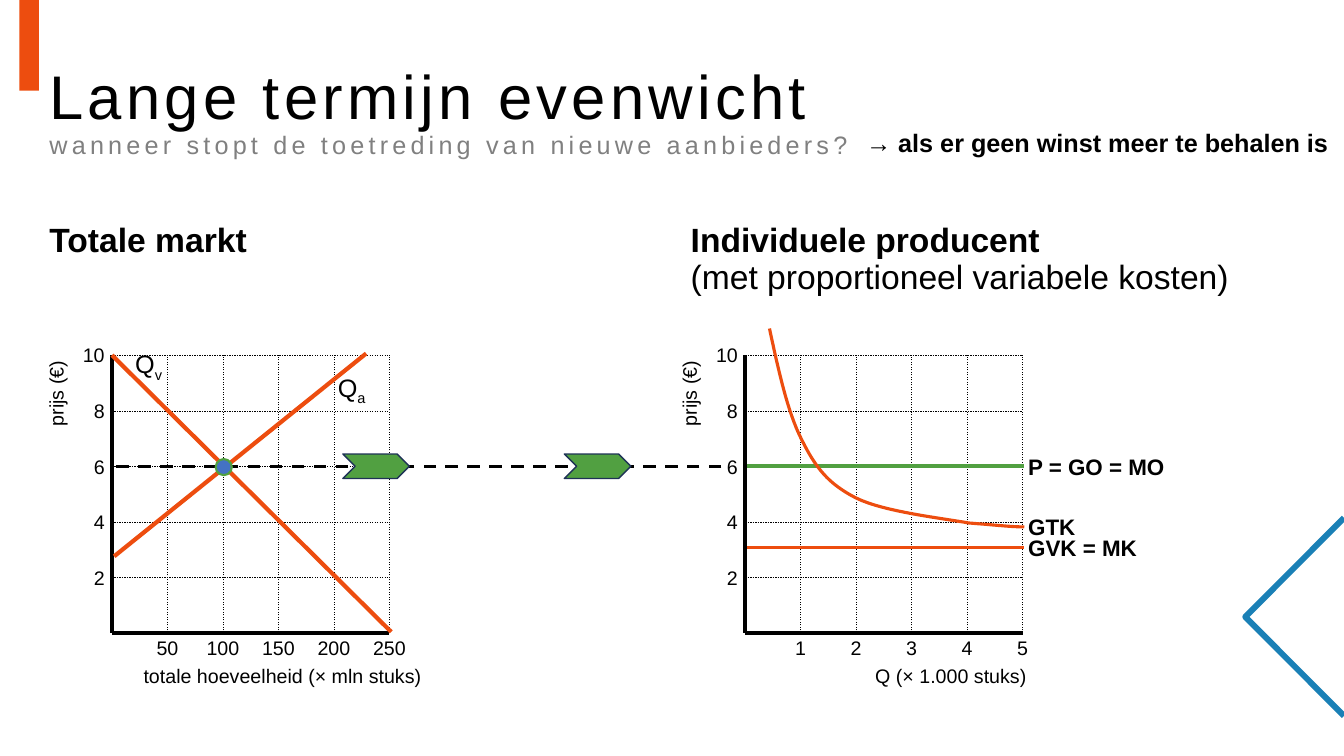
"""Build the slide on long-term market equilibrium with two price diagrams."""
import dataclasses

import lxml.etree
import pptx
import pptx.dml.color
import pptx.enum.dml
import pptx.enum.shapes
import pptx.enum.text
import pptx.oxml.ns
import pptx.util

ALIGN = pptx.enum.text.PP_ALIGN
ANCHOR = pptx.enum.text.MSO_ANCHOR
SHAPE = pptx.enum.shapes.MSO_SHAPE
WIDTH = pptx.util.Inches(13.33)
HEIGHT = pptx.util.Inches(7.5)


@dataclasses.dataclass(frozen=True)
class Theme:
    font: str = "Arial"
    black: str = "000000"
    grey: str = "808080"
    orange: str = "ED4D0F"
    green: str = "51A041"
    blue: str = "1A80B6"
    navy: str = "1E3256"
    dot: str = "4472C4"
    title: int = 44
    heading: int = 24
    text: int = 18
    curve_label: int = 16
    axis_label: int = 14


THEME = Theme()


def across(percent):
    return round(WIDTH * percent / 100)


def down(percent):
    return round(HEIGHT * percent / 100)


CELL_WIDTH = across(4.13)
CELL_HEIGHT = down(7.35)


@dataclasses.dataclass(frozen=True)
class Plot:
    left: int
    bottom: int
    cells: int = 5

    def at(self, column, row):
        return (round(self.left + column * CELL_WIDTH),
                round(self.bottom - row * CELL_HEIGHT))


def color(value):
    return pptx.dml.color.RGBColor.from_string(value)


def style_font(font, size, value=THEME.black, bold=False):
    font.name = THEME.font
    font.size = pptx.util.Pt(size)
    font.color.rgb = color(value)
    font.bold = bold


def style_line(line, value, width):
    line.color.rgb = color(value)
    line.width = pptx.util.Pt(width)


def add_line(slide, start, end, value, width, dashed=False):
    connector = slide.shapes.add_connector(
        pptx.enum.shapes.MSO_CONNECTOR.STRAIGHT, *start, *end)
    style_line(connector.line, value, width)
    if dashed:
        connector.line.dash_style = pptx.enum.dml.MSO_LINE.DASH
    lxml.etree.SubElement(connector._element.spPr, pptx.oxml.ns.qn("a:effectLst"))


def add_shape(slide, kind, left, top, width, height, fill, outline=None, weight=1):
    shape = slide.shapes.add_shape(kind, left, top, width, height)
    shape.shadow.inherit = False
    shape.fill.solid()
    shape.fill.fore_color.rgb = color(fill)
    if outline:
        style_line(shape.line, outline, weight)
    else:
        shape.line.fill.background()


def add_path(slide, points, value, width):
    builder = slide.shapes.build_freeform(*points[0])
    builder.add_line_segments(points[1:], close=False)
    shape = builder.convert_to_shape()
    shape.shadow.inherit = False
    shape.fill.background()
    style_line(shape.line, value, width)


def add_label(slide, text, position, size, align=ALIGN.LEFT, bold=False,
              width=CELL_WIDTH, rotation=0, subscript=""):
    x, y = position
    shift = {ALIGN.LEFT: 0, ALIGN.CENTER: width // 2, ALIGN.RIGHT: width}[align]
    height = down(4.5)
    box = slide.shapes.add_textbox(x - shift, y - height // 2, width, height)
    box.rotation = rotation
    frame = box.text_frame
    frame.word_wrap = True
    frame.vertical_anchor = ANCHOR.MIDDLE
    frame.margin_left = frame.margin_right = frame.margin_top = frame.margin_bottom = 0
    paragraph = frame.paragraphs[0]
    paragraph.alignment = align
    style_font(paragraph.font, size, bold=bold)
    paragraph.add_run().text = text
    if subscript:
        run = paragraph.add_run()
        run.text = subscript
        run._r.get_or_add_rPr().set("baseline", "-25000")


def fill_placeholder(placeholder, box, lines, spacing=0):
    placeholder.left, placeholder.top, placeholder.width, placeholder.height = box
    frame = placeholder.text_frame
    frame.word_wrap = True
    frame.auto_size = pptx.enum.text.MSO_AUTO_SIZE.NONE
    paragraph = frame.paragraphs[0]
    paragraph.alignment = ALIGN.LEFT
    paragraph.line_spacing = 0.9
    for index, (text, size, value, bold) in enumerate(lines):
        if index:
            paragraph.add_line_break()
        run = paragraph.add_run()
        run.text = text
        style_font(run.font, size, value, bold)
        if spacing:
            run._r.get_or_add_rPr().set("spc", str(spacing))
    return paragraph


def fill_heading(placeholder, box, lines):
    paragraph = fill_placeholder(placeholder, box, lines)
    paragraph.space_before = pptx.util.Pt(10)
    properties = paragraph._p.get_or_add_pPr()
    properties.set("marL", "0")
    properties.set("indent", "0")
    lxml.etree.SubElement(properties, pptx.oxml.ns.qn("a:buNone"))


def add_plot(slide, plot, quantity_step, quantity_title, title_column):
    end = plot.cells
    size = THEME.axis_label
    for step in range(1, end + 1):
        add_line(slide, plot.at(0, step), plot.at(end, step), THEME.black, 0.25, True)
        add_line(slide, plot.at(step, 0), plot.at(step, end), THEME.black, 0.25, True)
        add_label(slide, str(2 * step), plot.at(-0.13, step), size, ALIGN.RIGHT)
        add_label(slide, str(quantity_step * step), plot.at(step, -0.27), size, ALIGN.CENTER)
    add_line(slide, plot.at(0, 0), plot.at(0, end), THEME.black, 3)
    add_line(slide, plot.at(0, 0), plot.at(end, 0), THEME.black, 3)
    add_label(slide, quantity_title, plot.at(title_column, -0.76), size, ALIGN.RIGHT,
              width=6 * CELL_WIDTH)
    add_label(slide, "prijs (€)", plot.at(-1.01, 4.31), size, ALIGN.CENTER,
              width=2 * CELL_WIDTH, rotation=270)


def bezier_points(start, segments, steps=16):
    points = [start]
    for first, second, end in segments:
        origin = points[-1]
        for step in range(1, steps + 1):
            t = step / steps
            points.append(tuple(
                (1 - t) ** 3 * a + 3 * (1 - t) ** 2 * t * b + 3 * (1 - t) * t ** 2 * c + t ** 3 * d
                for a, b, c, d in zip(origin, first, second, end)))
    return points


def add_market_curves(slide, market):
    for start, end in (((0, 5), (5.03, 0.02)), ((4.58, 5.03), (0.04, 1.38))):
        add_line(slide, market.at(*start), market.at(*end), THEME.orange, 3)
    for letter, position in (("v", (0.42, 4.81)), ("a", (4.07, 4.39))):
        add_label(slide, "Q", market.at(*position), THEME.text, subscript=letter)
    add_line(slide, market.at(10.98, 3), market.at(0, 3), THEME.black, 2.25, True)
    for column in (4.16, 8.15):
        add_shape(slide, SHAPE.CHEVRON, *market.at(column, 3.22), round(1.2 * CELL_WIDTH),
                  round(0.44 * CELL_HEIGHT), THEME.green, THEME.navy)
    diameter = round(0.29 * CELL_WIDTH)
    add_shape(slide, SHAPE.OVAL, *market.at(1.87, 3.13), diameter, diameter,
              THEME.dot, THEME.green, 1.5)


def add_producer_curves(slide, producer):
    for row, value, width in ((3, THEME.green, 3), (1.54, THEME.orange, 2.25)):
        add_line(slide, producer.at(0.03, row), producer.at(5.03, row), value, width)
    cost_curve = bezier_points((0.44, 5.48), (
        ((0.6, 4.74), (0.76, 3.99), (1.02, 3.48)),
        ((1.27, 2.98), (1.49, 2.69), (2, 2.43)),
        ((2.51, 2.18), (3.53, 2.07), (4.03, 1.98)),
        ((4.56, 1.94), (4.78, 1.91), (5.03, 1.91))))
    add_path(slide, [producer.at(*point) for point in cost_curve], THEME.orange, 2.25)
    for text, row in (("P = GO = MO", 3), ("GVK = MK", 1.54), ("GTK", 1.92)):
        add_label(slide, text, producer.at(5.1, row), THEME.curve_label, bold=True,
                  width=3 * CELL_WIDTH)


def main():
    presentation = pptx.Presentation()
    presentation.slide_width, presentation.slide_height = WIDTH, HEIGHT
    slide = presentation.slides.add_slide(presentation.slide_layouts[3])
    title, market_heading, producer_heading = slide.placeholders
    add_shape(slide, SHAPE.RECTANGLE, across(1.45), 0, across(1.45), down(12), THEME.orange)
    add_path(slide, [(WIDTH, down(68.5)), (across(92.65), down(81.6)), (WIDTH, down(94.7))],
             THEME.blue, 4.25)
    fill_placeholder(title, (across(2.93), down(5.33), across(94.37), down(19.33)), (
        ("Lange termijn evenwicht", THEME.title, THEME.black, False),
        ("wanneer stopt de toetreding van nieuwe aanbieders?", THEME.text, THEME.grey, False)),
        spacing=300)
    title.text_frame.vertical_anchor = ANCHOR.MIDDLE
    fill_heading(market_heading, (across(2.93), down(28.93), across(43.36), down(68)), (
        ("Totale markt", THEME.heading, THEME.black, True),))
    fill_heading(producer_heading, (across(50.64), down(28.93), across(46.44), down(68)), (
        ("Individuele producent", THEME.heading, THEME.black, True),
        ("(met proportioneel variabele kosten)", THEME.heading, THEME.black, False)))
    market = Plot(across(8.33), down(83.73))
    producer = Plot(across(55.44), down(83.73))
    add_plot(slide, market, 50, "totale hoeveelheid (× mln stuks)", 5.58)
    add_plot(slide, producer, 1, "Q (× 1.000 stuks)", 5.07)
    add_market_curves(slide, market)
    add_producer_curves(slide, producer)
    add_label(slide, "→ als er geen winst meer te behalen is", (across(64.44), down(18.8)),
              THEME.text, bold=True, width=across(35.5))
    presentation.save("out.pptx")


if __name__ == "__main__":
    main()
